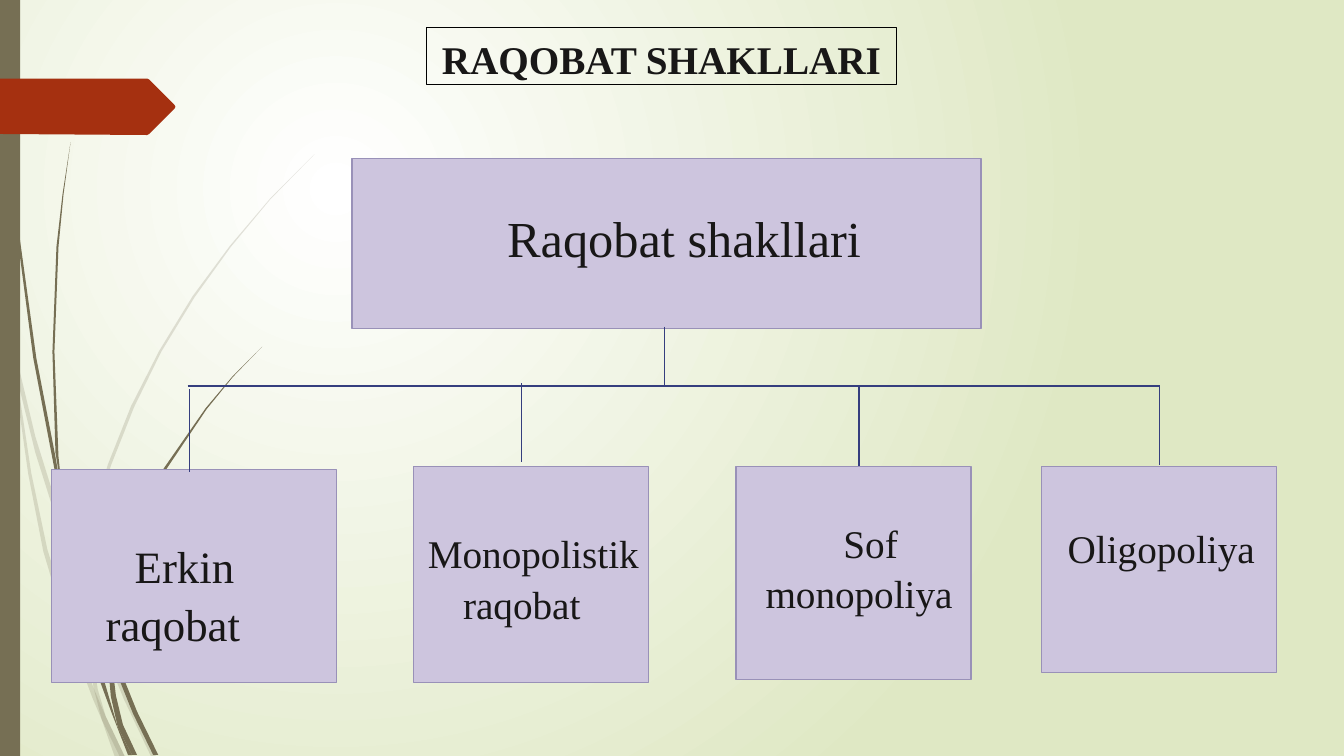
"""Builds the slide on the forms of competition as a small tree diagram."""
from dataclasses import dataclass

from lxml import etree
from pptx import Presentation
from pptx import util as u
from pptx.dml.color import RGBColor
from pptx.enum import shapes, text
from pptx.oxml.ns import qn

PX = 9144


@dataclass(frozen=True)
class Theme:
    font: str = "Times New Roman"
    ink: str = "181717"
    black: str = "000000"
    center: str = "FFFFFF"
    edge: str = "DFE8C4"
    stem: str = "766F54"
    arrow: str = "A53010"
    box: str = "CDC5DE"
    box_line: str = "9991B8"
    branch: str = "353E7E"
    root_size: int = 36
    large_size: int = 32
    body_size: int = 28


FAINT_BLADES = [
    [(0, 282), (9, 322), (17, 376), (31, 469), (47, 545), (70, 619), (93, 683), (105, 711), (124, 751),
     (114, 751), (101, 714), (92, 693), (65, 621), (43, 547), (28, 470), (11, 350), (0, 299)],
    [(14, 345), (35, 433), (62, 520), (92, 607), (127, 692), (155, 751),
     (150, 751), (123, 694), (84, 599), (58, 522), (35, 449), (17, 376)],
    [(85, 586), (90, 522), (107, 461), (130, 403), (158, 348), (191, 294), (228, 244), (268, 197), (312, 153),
     (268, 198), (229, 245), (193, 295), (160, 349), (133, 404), (110, 462), (93, 522), (88, 596)],
    [(85, 586), (84, 599), (87, 646), (93, 683), (101, 714), (119, 751),
     (124, 751), (105, 711), (97, 684), (91, 646), (88, 610)],
]

SOLID_BLADES = [
    [(3, 0), (7, 110), (17, 233), (33, 355), (57, 481), (68, 557), (79, 609), (93, 659), (111, 708), (127, 749),
     (131, 749), (117, 722), (98, 657), (83, 607), (72, 556), (64, 505), (55, 453), (36, 355), (19, 232),
     (8, 109), (4, 0)],
    [(60, 472), (75, 532), (93, 590), (113, 649), (136, 706), (157, 749),
     (152, 749), (132, 708), (111, 656), (88, 592), (64, 505)],
    [(70, 141), (62, 193), (56, 245), (52, 349), (55, 449), (64, 505),
     (60, 472), (58, 453), (54, 349), (58, 245), (63, 193)],
    [(106, 631), (111, 590), (122, 551), (137, 511), (156, 474), (204, 405), (231, 373), (260, 344),
     (231, 374), (205, 406), (158, 476), (139, 513), (125, 552), (114, 592), (110, 641)],
    [(106, 631), (106, 645), (110, 691), (117, 722), (131, 749),
     (136, 749), (122, 719), (115, 690), (111, 656), (110, 641)],
]

ARROW = [(0, 78), (146, 78), (148, 79), (173, 104), (174, 106), (173, 108), (148, 133), (146, 134), (0, 133)]
BOXES = [(349, 157, 624, 169), (51, 466, 283, 211), (410, 463, 233, 214), (730, 463, 233, 211), (1033, 463, 233, 204)]
BRANCHES = [(186, 383, 1151, 383), (659, 324, 659, 382), (188, 386, 188, 468),
            (852, 384, 852, 462), (517, 380, 517, 458), (1150, 382, 1150, 461)]


def color(value):
    return RGBColor.from_string(value)


def write(frame, wording, *, theme, size, bold=False, align=text.PP_ALIGN.LEFT, indent=23, insets=(0, 0), wrap=True):
    frame.word_wrap = wrap
    frame.vertical_anchor = text.MSO_ANCHOR.TOP
    frame.margin_left = frame.margin_right = insets[0] * PX
    frame.margin_top = frame.margin_bottom = insets[1] * PX
    paragraph = frame.paragraphs[0]
    paragraph.alignment = align
    paragraph.line_spacing = 1.07
    paragraph.space_after = u.Pt(8)
    paragraph._p.get_or_add_pPr().set("indent", str(indent * PX))
    run = paragraph.add_run()
    run.text = wording
    run.font.name, run.font.size, run.font.bold = theme.font, u.Pt(size), bold
    run.font.color.rgb = color(theme.ink)


class Board:
    def __init__(self, presentation, theme):
        self.theme = theme
        self.slide = presentation.slides.add_slide(presentation.slide_layouts[6])

    def background(self):
        fill = self.slide.background.fill
        fill.gradient()
        for stop, value in zip(fill.gradient_stops, (self.theme.center, self.theme.edge)):
            stop.color.rgb = color(value)
        gradient = self.slide._element.find(".//" + qn("a:gradFill"))
        gradient.remove(gradient.find(qn("a:lin")))
        circle = etree.SubElement(gradient, qn("a:path"), path="circle")
        etree.SubElement(circle, qn("a:fillToRect"), l="50000", t="50000", r="100000", b="100000")

    def paint(self, shape, fill=None, line=None, width=1):
        shape.shadow.inherit = False
        if fill:
            shape.fill.solid()
            shape.fill.fore_color.rgb = color(fill)
        else:
            shape.fill.background()
        if line:
            shape.line.color.rgb = color(line)
            shape.line.width = u.Pt(width)
        else:
            shape.line.fill.background()
        return shape

    def outline(self, points, fill, opacity=100):
        builder = self.slide.shapes.build_freeform(*points[0], scale=PX)
        builder.add_line_segments(points[1:], close=True)
        shape = self.paint(builder.convert_to_shape(), fill)
        if opacity < 100:
            solid = shape._element.spPr.find(qn("a:solidFill"))
            etree.SubElement(solid[0], qn("a:alpha"), val=str(opacity * 1000))

    def box(self, area, **look):
        area = [length * PX for length in area]
        return self.paint(self.slide.shapes.add_shape(shapes.MSO_SHAPE.RECTANGLE, *area), **look)

    def label(self, area, wording, **style):
        shape = self.slide.shapes.add_textbox(*[length * PX for length in area])
        write(shape.text_frame, wording, theme=self.theme, **style)

    def branch(self, ends):
        ends = [length * PX for length in ends]
        connector = self.slide.shapes.add_connector(shapes.MSO_CONNECTOR.STRAIGHT, *ends)
        connector.line.color.rgb = color(self.theme.branch)
        connector.line.width = u.Pt(1)
        etree.SubElement(connector._element.spPr, qn("a:effectLst"))


def main():
    presentation = Presentation()
    presentation.slide_width, presentation.slide_height = 1333 * PX, 750 * PX
    theme = Theme()
    board = Board(presentation, theme)
    board.background()
    for blades, opacity in ((FAINT_BLADES, 20), (SOLID_BLADES, 100)):
        for blade in blades:
            board.outline(blade, theme.stem, opacity)
    board.box((0, 0, 20, 750), fill=theme.stem)
    board.outline(ARROW, theme.arrow)

    center = text.PP_ALIGN.CENTER
    title = board.box((423, 27, 466, 57), line=theme.black, width=0.75)
    write(title.text_frame, "RAQOBAT SHAKLLARI", theme=theme, size=theme.body_size, bold=True,
          align=center, indent=0, insets=(10, 5), wrap=False)
    for area in BOXES:
        board.box(area, fill=theme.box, line=theme.box_line)
    board.label((480, 201, 400, 96), "Raqobat shakllari", size=theme.root_size)
    board.label((37, 531, 269, 96), "Erkin raqobat", size=theme.large_size, align=center, insets=(12, 0))
    board.label((379, 522, 277, 96), "Monopolistik raqobat", size=theme.body_size, align=center)
    board.label((1036, 517, 235, 96), "Oligopoliya", size=theme.body_size)
    for ends in BRANCHES:
        board.branch(ends)
    board.label((746, 507, 212, 111), "Sof monopoliya", size=theme.body_size, align=center, insets=(10, 5))
    presentation.save("out.pptx")


if __name__ == "__main__":
    main()
